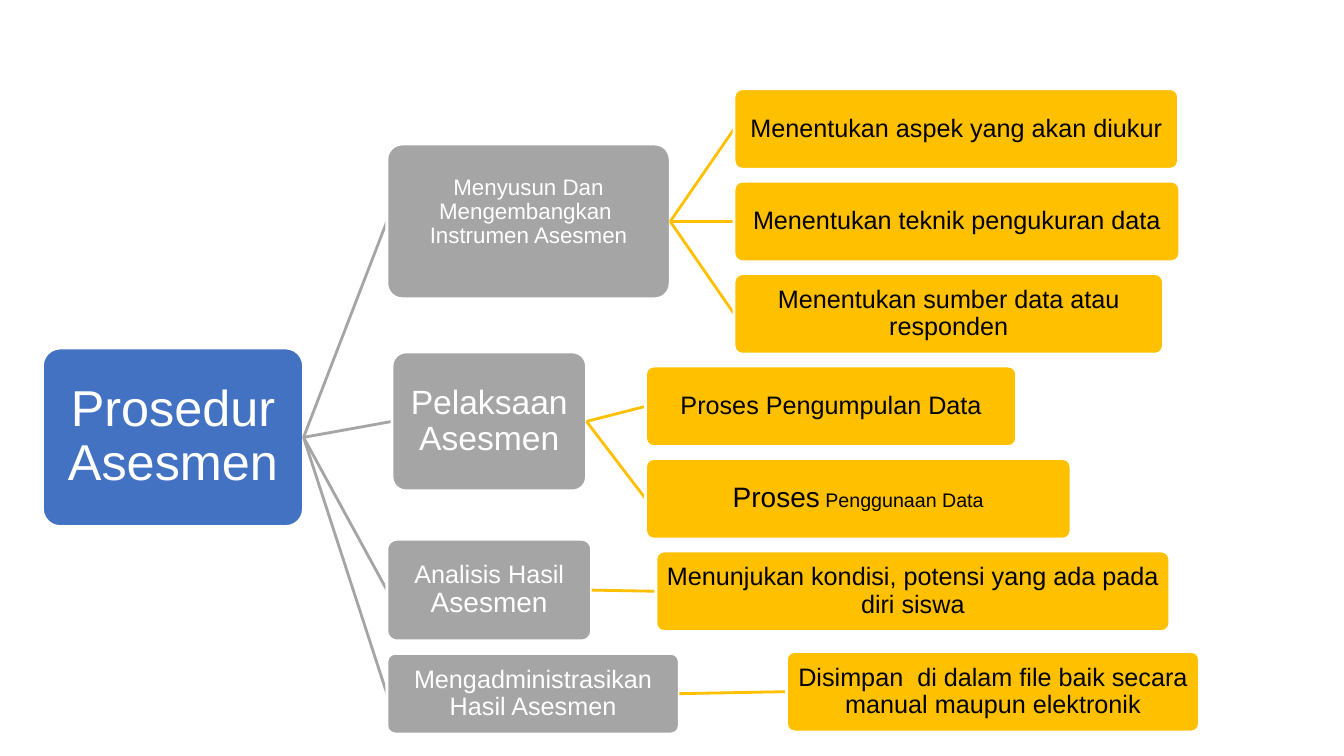
from lxml.etree import SubElement
from pptx import Presentation
from pptx.dml.color import RGBColor
from pptx.enum.shapes import MSO_CONNECTOR, MSO_SHAPE
from pptx.enum.text import MSO_ANCHOR, MSO_AUTO_SIZE, PP_ALIGN
from pptx.oxml.ns import qn
from pptx.util import Cm, Pt

BLUE, GREY, GOLD = "4372C3", "A5A5A5", "FFC000"
WHITE, BLACK = "FFFFFF", "000000"
LEFT_SITE, RIGHT_SITE = 1, 3
STEP_HEIGHT = 2.03
FIRST_STEP, STEP_PITCH = 3.25, 2.33
LAST_STEP = 17.43

STAGES = [
    ((9.75, 5.58, 7.14, 3.9), [("Menyusun Dan Mengembangkan  Instrumen Asesmen", 16)], 0.5, [
        (18.5, 11.2, [("Menentukan aspek yang akan diukur", 18)]),
        (18.5, 11.23, [("Menentukan teknik pengukuran data", 18)]),
        (18.5, 10.82, [("Menentukan sumber data atau responden", 18)]),
    ]),
    ((9.88, 10.62, 4.9, 3.5), [("Pelaksaan Asesmen", 24)], 0.04, [
        (16.27, 9.35, [("Proses Pengumpulan Data", 18)]),
        (16.27, 10.72, [("Proses", 20), (" Penggunaan Data", 14)]),
    ]),
    ((9.75, 14.87, 5.16, 2.56), [("Analisis Hasil ", 18), ("Asesmen", 20)], 0.04, [
        (16.53, 12.95, [("Menunjukan kondisi, potensi yang ada pada diri siswa", 18)]),
    ]),
    ((9.75, 17.48, 7.37, STEP_HEIGHT), [("Mengadministrasikan Hasil Asesmen", 18)], 0.04, [
        (19.82, 10.41, [("Disimpan  di dalam file baik secara manual maupun elektronik", 18)]),
    ]),
]


def colour(hex_string):
    return RGBColor.from_string(hex_string)


def write(frame, parts, ink, bottom=0.04):
    frame.word_wrap = True
    frame.auto_size = MSO_AUTO_SIZE.NONE
    frame.vertical_anchor = MSO_ANCHOR.MIDDLE
    frame.margin_left = frame.margin_right = frame.margin_top = Cm(0.04)
    frame.margin_bottom = Cm(bottom)
    frame.text = parts[0][0]
    paragraph = frame.paragraphs[0]
    for words, _ in parts[1:]:
        paragraph.add_run().text = words
    paragraph.alignment = PP_ALIGN.CENTER
    paragraph.line_spacing = 0.9
    paragraph.space_before = Pt(0)
    for run, (_, size) in zip(paragraph.runs, parts):
        run.font.name = "Arial"
        run.font.size = Pt(size)
        run.font.color.rgb = colour(ink)


def add_node(slide, left, centre, width, height, fill):
    node = slide.shapes.add_shape(MSO_SHAPE.ROUNDED_RECTANGLE, Cm(left),
                                  Cm(centre - height / 2), Cm(width), Cm(height))
    node.adjustments[0] = 0.1
    node.shadow.inherit = False
    node.fill.solid()
    node.fill.fore_color.rgb = colour(fill)
    node.line.color.rgb = colour(WHITE)
    node.line.width = Pt(2)
    return node


def link(slide, parent, child, stroke):
    branch = slide.shapes.add_connector(MSO_CONNECTOR.STRAIGHT, 0, 0, 0, 0)
    branch.begin_connect(parent, RIGHT_SITE)
    branch.end_connect(child, LEFT_SITE)
    branch.line.color.rgb = colour(stroke)
    branch.line.width = Pt(2)
    SubElement(branch.element.spPr, qn("a:effectLst"))
    child.element.addprevious(branch.element)


def add_heading(slide, procedure):
    heading = slide.shapes.title
    heading.left, heading.top = procedure.left + Cm(0.13), procedure.top + Cm(0.13)
    heading.width, heading.height = procedure.width - Cm(0.26), procedure.height - Cm(0.26)
    write(heading.text_frame, [("Prosedur Asesmen", 36)], WHITE)
    procedure.element.addnext(heading.element)


def main():
    deck = Presentation()
    deck.slide_width, deck.slide_height = Cm(33.87), Cm(19.05)
    slide = deck.slides.add_slide(deck.slide_layouts[5])
    procedure = add_node(slide, 1.07, 11.02, 6.58, 4.5, BLUE)
    add_heading(slide, procedure)
    step_centres = iter([FIRST_STEP + STEP_PITCH * row for row in range(6)] + [LAST_STEP])
    for place, stage_text, bottom, steps in STAGES:
        stage = add_node(slide, *place, GREY)
        write(stage.text_frame, stage_text, WHITE, bottom)
        link(slide, procedure, stage, GREY)
        for left, width, step_text in steps:
            step = add_node(slide, left, next(step_centres), width, STEP_HEIGHT, GOLD)
            write(step.text_frame, step_text, BLACK)
            link(slide, stage, step, GOLD)
    deck.save("out.pptx")


if __name__ == "__main__":
    main()
